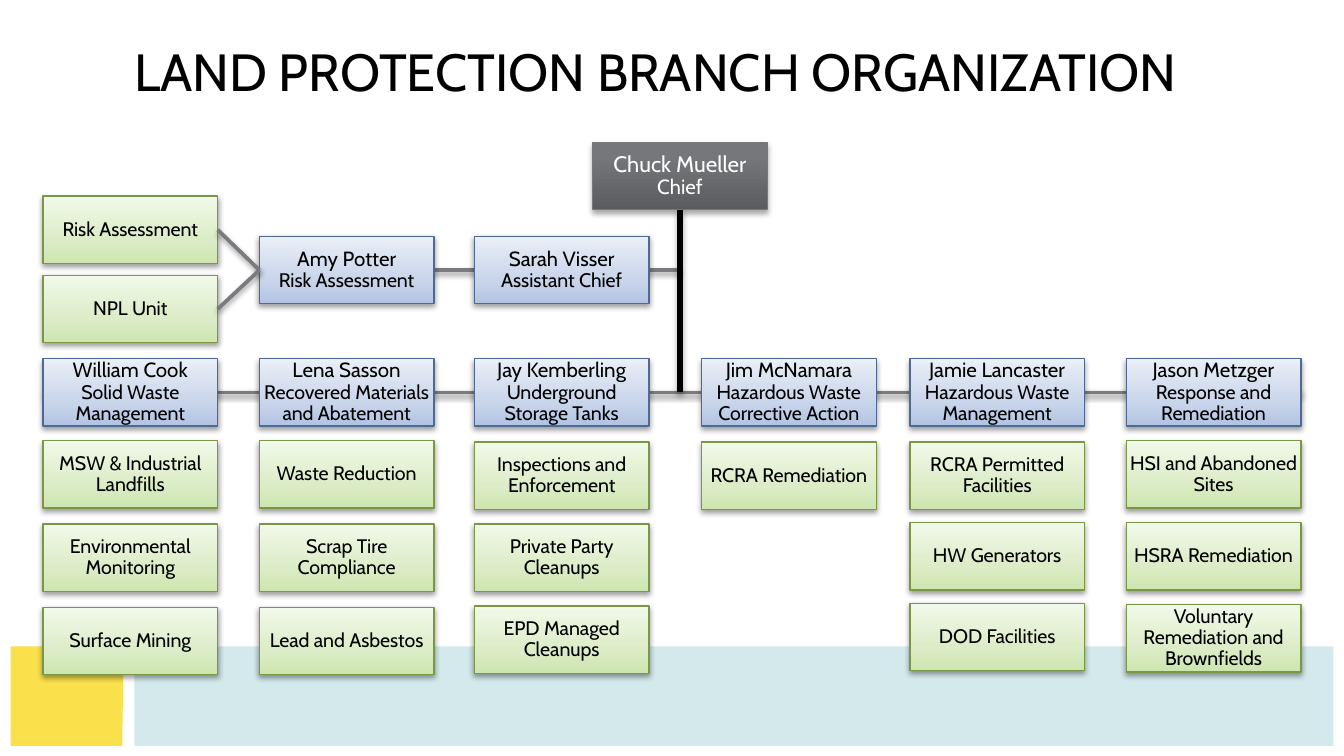
import copy
from dataclasses import dataclass
from typing import Any

import pptx
import pptx.dml.color
import pptx.enum.shapes
import pptx.enum.text
import pptx.oxml.ns
import pptx.util
from lxml import etree

Inches = pptx.util.Inches
Pt = pptx.util.Pt
qn = pptx.oxml.ns.qn

FONT = "Cabin"
BOX_WIDTH, BOX_HEIGHT = 1.3, 0.5
COLORS = {
    "black": "000000",
    "white": "FFFFFF",
    "connector": "797B7E",
    "yellow": "FAE04B",
    "aqua": "C8E4E8",
}


@dataclass(frozen=True)
class BoxStyle:
    stops: tuple[tuple[float, str], ...]
    outline: str
    text: str
    name_size: float
    role_size: float
    shadow_opacity: int
    shadow_distance: float


@dataclass(frozen=True)
class Section:
    left: float
    manager: str
    role: str
    units: tuple[str, ...]
    first_top: float
    pitch: float


CHIEF = BoxStyle(((0, "5A5C5F"), (0.8, "75777B"), (1, "75787C")), "76787B", "white", 12, 11, 35, 1.8)
MANAGER = BoxStyle(((0, "B2C3E3"), (0.35, "C9D5EA"), (1, "EAEFF8")), "4D6B92", "black", 11, 10.5, 38, 1.6)
UNIT = BoxStyle(((0, "CDE6AF"), (0.35, "DCECC7"), (1, "F1F9E9")), "7A9746", "black", 11, 10.5, 38, 1.6)

SECTIONS = (
    Section(0.32, "William Cook\n", "Solid Waste Management",
            ("MSW & Industrial Landfills", "Environmental Monitoring", "Surface Mining"), 3.28, 0.62),
    Section(1.93, "Lena Sasson\n", "Recovered Materials and Abatement",
            ("Waste Reduction", "Scrap Tire Compliance", "Lead and Asbestos"), 3.28, 0.62),
    Section(3.53, "Jay Kemberling ", "Underground Storage Tanks",
            ("Inspections and Enforcement", "Private Party Cleanups", "EPD Managed\nCleanups"), 3.29, 0.61),
    Section(5.22, "Jim McNamara ", "Hazardous Waste Corrective Action",
            ("RCRA Remediation",), 3.29, 0.61),
    Section(6.77, "Jamie Lancaster ", "Hazardous Waste Management",
            ("RCRA Permitted Facilities", "HW Generators", "DOD Facilities"), 3.29, 0.6),
    Section(8.38, "Jason Metzger ", "Response and Remediation",
            ("HSI and Abandoned Sites", "HSRA Remediation", "Voluntary Remediation and Brownfields"), 3.28, 0.61),
)


def rgb(value: str) -> pptx.dml.color.RGBColor:
    """Turn a hex string into a colour."""
    return pptx.dml.color.RGBColor.from_string(value)


def add_shadow(effects: Any, opacity: int, distance: float) -> None:
    """Put a soft downward shadow in an effect list."""
    shadow = etree.SubElement(effects, qn("a:outerShdw"), blurRad=str(Pt(3.1)),
                              dist=str(Pt(distance)), dir="5400000", rotWithShape="0")
    color = etree.SubElement(shadow, qn("a:srgbClr"), val=COLORS["black"])
    etree.SubElement(color, qn("a:alpha"), val=str(opacity * 1000))


def add_text(para: Any, text: str, size: float, color: str) -> None:
    """Add formatted runs to a paragraph, with a line break at each newline."""
    for index, line in enumerate(text.split("\n")):
        if index:
            para.add_line_break()
        if line:
            span = para.add_run()
            span.text = line
            span.font.name = FONT
            span.font.size = Pt(size)
            span.font.color.rgb = rgb(COLORS[color])


def add_box(page: Any, left: float, top: float, style: BoxStyle, role: str, name: str = "") -> Any:
    """Draw a box with an optional name above its role."""
    box = page.shapes.add_shape(pptx.enum.shapes.MSO_SHAPE.RECTANGLE, Inches(left), Inches(top),
                                Inches(BOX_WIDTH), Inches(BOX_HEIGHT))
    box.fill.gradient()
    box.fill.gradient_angle = 90
    stop_list = box.element.spPr.find(".//" + qn("a:gsLst"))
    stop_list.append(copy.deepcopy(stop_list[0]))
    for stop, (position, color) in zip(box.fill.gradient_stops, style.stops):
        stop.position = position
        stop.color.rgb = rgb(color)
    box.line.color.rgb = rgb(style.outline)
    box.line.width = Pt(0.75)
    box.shadow.inherit = False
    add_shadow(box.element.spPr.find(qn("a:effectLst")), style.shadow_opacity, style.shadow_distance)
    frame = box.text_frame
    frame.word_wrap = True
    frame.vertical_anchor = pptx.enum.text.MSO_ANCHOR.MIDDLE
    frame.margin_left = frame.margin_right = frame.margin_top = frame.margin_bottom = Inches(0.01)
    para = frame.paragraphs[0]
    para.alignment = pptx.enum.text.PP_ALIGN.CENTER
    para.line_spacing = 0.9
    add_text(para, name, style.name_size, style.text)
    add_text(para, role, style.role_size, style.text)
    return box


def add_line(page: Any, start: tuple[float, float], end: tuple[float, float],
             color: str = "connector", width: float = 2,
             opacity: int = 38, distance: float = 1.6) -> Any:
    """Draw a straight connector with a shadow."""
    line = page.shapes.add_connector(pptx.enum.shapes.MSO_CONNECTOR.STRAIGHT,
                                     *(Inches(value) for value in start + end))
    line.line.color.rgb = rgb(COLORS[color])
    line.line.width = Pt(width)
    effects = etree.SubElement(line.element.spPr, qn("a:effectLst"))
    add_shadow(effects, opacity, distance)
    return line


def add_band(page: Any, points: tuple[tuple[float, float], ...], color: str, opacity: int = 100) -> None:
    """Draw one footer block."""
    builder = page.shapes.build_freeform(Inches(points[0][0]), Inches(points[0][1]))
    builder.add_line_segments([(Inches(x), Inches(y)) for x, y in points[1:]], close=True)
    band = builder.convert_to_shape()
    band.shadow.inherit = False
    band.fill.solid()
    band.fill.fore_color.rgb = rgb(COLORS[color])
    band.line.fill.background()
    if opacity < 100:
        tint = band.element.spPr.find(qn("a:solidFill"))[0]
        etree.SubElement(tint, qn("a:alpha"), val=str(opacity * 1000))


def add_title(page: Any, text: str) -> None:
    """Add the slide heading."""
    box = page.shapes.add_textbox(Inches(0.9), Inches(0.3), Inches(8.22), Inches(0.45))
    box.text_frame.word_wrap = True
    box.text_frame.vertical_anchor = pptx.enum.text.MSO_ANCHOR.MIDDLE
    add_text(box.text_frame.paragraphs[0], text, 28, "black")


def main() -> None:
    """Build the organization chart."""
    deck = pptx.Presentation()
    deck.slide_width = Inches(10)
    deck.slide_height = Inches(10 * 9 / 16)
    page = deck.slides.add_slide(deck.slide_layouts[6])
    add_band(page, ((0.08, 5.55), (0.08, 4.81), (0.92, 4.81), (0.91, 5.55)), "yellow")
    add_band(page, ((1, 5.55), (1, 4.81), (9.92, 4.81), (9.92, 5.55)), "aqua", 80)

    assistant_line = add_line(page, (1.93, 2.01), (5.06, 2.01))
    section_line = add_line(page, (0.32, 2.92), (9.68, 2.92))
    chief = add_box(page, 4.41, 1.06, CHIEF, "Chief", "Chuck Mueller\n")
    add_box(page, 3.53, 1.76, MANAGER, "Assistant Chief", "Sarah Visser\n")
    risk_manager = add_box(page, 1.93, 1.76, MANAGER, "Risk Assessment", "Amy Potter\n")
    risk_units = [add_box(page, 0.32, top, UNIT, unit)
                  for top, unit in ((1.46, "Risk Assessment"), (2.05, "NPL Unit"))]

    managers = []
    for section in SECTIONS:
        managers.append(add_box(page, section.left, 2.67, MANAGER, section.role, section.manager))
        for row, unit in enumerate(section.units):
            add_box(page, section.left, section.first_top + row * section.pitch, UNIT, unit)

    assistant_line.begin_connect(risk_manager, 1)
    section_line.begin_connect(managers[0], 1)
    section_line.end_connect(managers[-1], 3)
    trunk = add_line(page, (5.06, 1.56), (5.06, 2.92), "black", 3, 35, 1.8)
    trunk.begin_connect(chief, 2)
    for unit_box, middle in zip(risk_units, (1.71, 2.3)):
        branch = add_line(page, (1.93, 2.01), (1.62, middle))
        branch.begin_connect(risk_manager, 1)
        branch.end_connect(unit_box, 3)

    add_title(page, "LAND PROTECTION BRANCH ORGANIZATION")
    deck.save("out.pptx")


if __name__ == "__main__":
    main()
